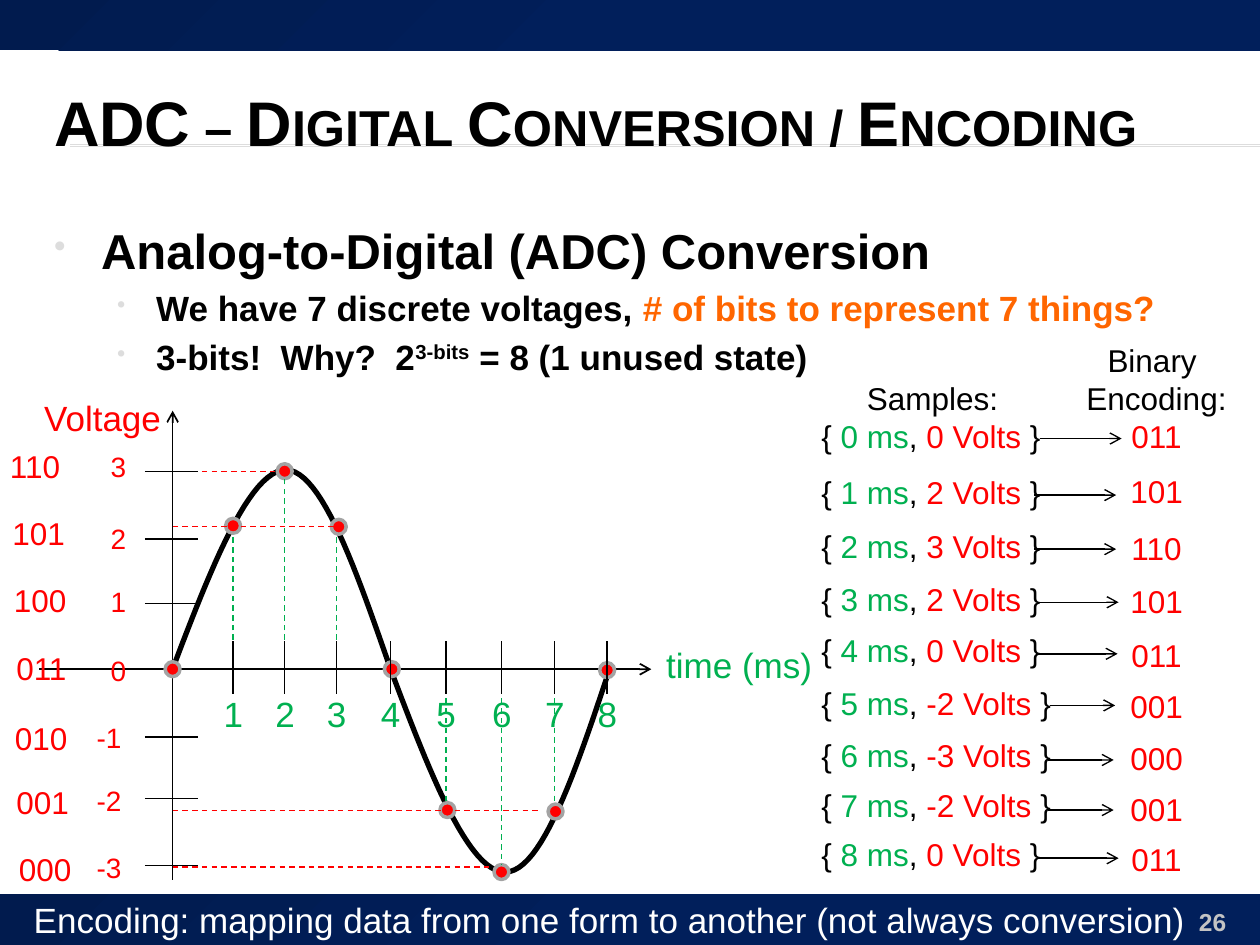
from lxml import etree
from pptx import Presentation
from pptx.dml.color import RGBColor
from pptx.enum.dml import MSO_LINE
from pptx.enum.shapes import MSO_CONNECTOR, MSO_SHAPE
from pptx.enum.text import MSO_ANCHOR, MSO_AUTO_SIZE, PP_ALIGN
from pptx.oxml.ns import qn
from pptx.util import Cm, Pt

STRAIGHT = MSO_CONNECTOR.STRAIGHT
RECT, OVAL = MSO_SHAPE.RECTANGLE, MSO_SHAPE.OVAL
DASH = MSO_LINE.DASH
MIDDLE = MSO_ANCHOR.MIDDLE
GROW = MSO_AUTO_SIZE.SHAPE_TO_FIT_TEXT
LEFT, CENTER, RIGHT = PP_ALIGN.LEFT, PP_ALIGN.CENTER, PP_ALIGN.RIGHT

FONT = "Arial"
COLORS = {
    "black": "000000", "white": "FFFFFF", "red": "FF0000", "green": "00B050",
    "orange": "FF6600", "rule": "DDDDDD", "ring": "A3A3A3", "number": "C3C3C3",
    "navy_dark": "011B4E", "navy": "011F5B",
}

# All lengths below are in centimetres.
AXIS_X, AXIS_Y = 3.48, 13.49
TIME_X = [4.7, 5.74, 6.78, 7.87, 8.99, 10.11, 11.18, 12.24]
DOTS = [(3.48, 13.49), (4.7, 10.6), (5.74, 9.5), (6.83, 10.62), (7.9, 13.49),
        (9.02, 16.33), (10.11, 17.58), (11.2, 16.36), (12.24, 13.51)]
DOT_R = 0.15
# volts: tick y, label top, code left, code top
LEVELS = {
    3: (9.5, 8.94, -0.05, 8.89), 2: (10.87, 10.39, 0, 10.24),
    1: (12.17, 11.66, 0.03, 11.58), 0: (13.49, 13.06, 0.08, 12.95),
    -1: (14.86, 14.4, 0.05, 14.38), -2: (16.1, 15.67, 0.08, 15.67),
    -3: (17.45, 17.02, 0.13, 17.02),
}
# volts, sample top, code top, arrow x, arrow y; one row per millisecond
SAMPLES = [
    (0, 7.52, 6.76, 20.96, 8.84), (2, 9.42, 9.4, 20.85, 9.98),
    (3, 10.49, 10.54, 20.85, 11.07), (2, 11.56, 11.61, 20.9, 12.14),
    (0, 12.6, 12.7, 20.88, 13.18), (-2, 13.67, 13.72, 21.16, 14.22),
    (-3, 14.71, 14.78, 21.13, 15.32), (-2, 15.72, 15.8, 21.13, 16.33),
    (0, 16.71, 16.81, 20.9, 17.3),
]
# level line y, right end
HELD_LEVELS = [(10.62, 6.78), (9.5, 5.72), (17.48, 9.93), (16.34, 10.92)]
HALF_WAVES = [
    [(3.48, 13.49), (4.24, 11.48), (5.03, 9.47), (5.77, 9.47),
     (6.5, 9.5), (7.19, 11.53), (7.9, 13.56)],
    [(7.9, 13.56), (8.66, 15.57), (9.45, 17.6), (10.19, 17.58),
     (10.92, 17.58), (11.61, 15.54), (12.29, 13.49)],
]


def rgb(name):
    return RGBColor.from_string(COLORS[name])


def encode(volts):
    """Three-bit code of a level from -3 to 3."""
    return format(volts + 3, "03b")


def add_runs(p, runs, size, bold=False):
    """Fill a paragraph from (text, colour name) pairs."""
    for text, color in runs:
        r = p.add_run()
        r.text = text
        r.font.name, r.font.size, r.font.bold = FONT, Pt(size), bold
        r.font.color.rgb = rgb(color)


def add_text(slide, box, paragraphs, size, bold=False, wrap=False):
    """Add a text box; paragraphs are (alignment, runs) pairs."""
    sp = slide.shapes.add_textbox(*map(Cm, box))
    tf = sp.text_frame
    tf.word_wrap = wrap
    tf.auto_size = MSO_AUTO_SIZE.NONE if wrap else GROW
    for i, (align, runs) in enumerate(paragraphs):
        p = tf.add_paragraph() if i else tf.paragraphs[0]
        p.alignment = align
        add_runs(p, runs, size, bold)
    return tf


def add_label(slide, box, text, color, size):
    return add_text(slide, box, [(LEFT, [(text, color)])], size)


def add_line(slide, x1, y1, x2, y2, color="black", width=0.79, dash=None, arrow=False):
    line = slide.shapes.add_connector(STRAIGHT, Cm(x1), Cm(y1), Cm(x2), Cm(y2))
    line.line.color.rgb = rgb(color)
    line.line.width = Pt(width)
    if dash:
        line.line.dash_style = dash
    if arrow:
        etree.SubElement(line.line._get_or_add_ln(), qn("a:tailEnd"), type="arrow")
    etree.SubElement(line._element.spPr, qn("a:effectLst"))


def add_band(slide, top):
    sp = slide.shapes.add_shape(RECT, 0, Cm(top), Cm(25.4), Cm(1.02))
    sp.shadow.inherit = False
    sp.line.fill.background()
    sp.fill.gradient()
    sp.fill.gradient_angle = 315
    start, end = sp.fill.gradient_stops
    start.color.rgb, start.position = rgb("navy_dark"), 0
    end.color.rgb, end.position = rgb("navy"), 0.5


def add_dot(slide, x, y):
    sp = slide.shapes.add_shape(OVAL, Cm(x - DOT_R), Cm(y - DOT_R), Cm(2 * DOT_R), Cm(2 * DOT_R))
    sp.shadow.inherit = False
    sp.fill.solid()
    sp.fill.fore_color.rgb = rgb("red")
    sp.line.color.rgb = rgb("ring")
    sp.line.width = Pt(2)


def bezier(a, b, c, d, t):
    u = 1 - t
    return tuple(Cm(u**3 * i + 3 * u * u * t * j + 3 * u * t * t * k + t**3 * m)
                 for i, j, k, m in zip(a, b, c, d))


def add_curve(slide, points, steps=24):
    """Draw chained cubic Bezier segments as one open outline."""
    outline = [bezier(*points[i:i + 4], n / steps)
               for i in range(0, len(points) - 1, 3) for n in range(steps + 1)]
    builder = slide.shapes.build_freeform(*outline[0])
    builder.add_line_segments(outline[1:], close=False)
    sp = builder.convert_to_shape()
    sp.shadow.inherit = False
    sp.fill.background()
    sp.line.color.rgb = rgb("black")
    sp.line.width = Pt(3)


def add_bullet(p, indent, hanging, space):
    p.space_before = Pt(space)
    pPr = p._p.get_or_add_pPr()
    pPr.set("marL", str(Cm(indent)))
    pPr.set("indent", str(-Cm(hanging)))
    color = etree.SubElement(pPr, qn("a:buClr"))
    etree.SubElement(color, qn("a:srgbClr"), val=COLORS["rule"])
    etree.SubElement(pPr, qn("a:buSzPct"), val="70000")
    etree.SubElement(pPr, qn("a:buChar"), char="•")


def add_heading(slide):
    title = [(LEFT, [("ADC – Digital Conversion / Encoding", "black")])]
    tf = add_text(slide, (0.84, 1.27, 24.13, 2.34), title, 36, True, True)
    tf.vertical_anchor = MIDDLE
    tf.paragraphs[0].runs[0].font._element.set("cap", "small")

    tf = add_text(slide, (0.84, 4.32, 24.5, 5), [
        (LEFT, [("Analog-to-Digital (ADC) Conversion", "black")]),
        (LEFT, [("We have 7 discrete voltages, ", "black"),
                ("# of bits to represent 7 things?", "orange")]),
        (LEFT, [("3-bits!  Why?  2", "black"), ("3-bits", "black"),
                (" = 8 (1 unused state)", "black")]),
    ], 20, True, True)
    main_point, *details = tf.paragraphs
    main_point.runs[0].font.size = Pt(28)
    add_bullet(main_point, 0.95, 0.95, 5.6)
    for p in details:
        add_bullet(p, 2.06, 0.79, 4)
    details[-1].runs[1].font._element.set("baseline", "30000")


def add_graph(slide):
    add_line(slide, 0.79, AXIS_Y, 13.13, AXIS_Y, width=1, arrow=True)
    add_line(slide, AXIS_X, 17.73, AXIS_X, 8.28, width=1, arrow=True)
    add_label(slide, (13.18, 12.85, 3.48, 1.12), "time (ms)", "green", 20)
    add_label(slide, (0.64, 7.87, 2.9, 1.12), "Voltage", "red", 20)
    for points in HALF_WAVES:
        add_curve(slide, points)
    for x, y in DOTS:
        add_dot(slide, x, y)
    for y, right in HELD_LEVELS:
        add_line(slide, AXIS_X, y, right, y, "red", dash=DASH)
    for ms, x in enumerate(TIME_X, 1):
        y = DOTS[ms][1]
        if abs(y - AXIS_Y) > DOT_R:
            edge = y + DOT_R if y < AXIS_Y else y - DOT_R
            add_line(slide, x, AXIS_Y, x, edge, "green", dash=DASH)
        add_line(slide, x, 12.93, x, 14)
        add_label(slide, (x - 0.44, 13.84, 0.91, 1.12), str(ms), "green", 20)
    for volts, (y, label_top, code_left, code_top) in LEVELS.items():
        if volts:
            add_line(slide, 2.92, y, 3.99, y)
        left, width = (1.7, 1.02) if volts < 0 else (1.98, 0.84)
        add_label(slide, (left, label_top, width, 0.94), str(volts), "red", 16)
        add_label(slide, (code_left, code_top, 1.57, 1.02), encode(volts), "red", 18)


def add_samples(slide):
    for ms, (volts, top, code_top, x, y) in enumerate(SAMPLES):
        sample = [(LEFT, [("{ ", "black"), (f"{ms} ms", "green"), (", ", "black"),
                          (f"{volts} Volts", "red"), (" }", "black")])]
        code = [(CENTER, [(encode(volts), "red")])]
        code_box = (22.53, code_top, 1.57, 1.02)
        if ms == 0:
            sample.insert(0, (CENTER, [("Samples:", "black")]))
            code = [(CENTER, [(word, "black")]) for word in ("Binary ", "Encoding:")] + code
            code_box = (21.64, code_top, 3.35, 2.57)
        width, reach = (5.18, 1.32) if volts < 0 else (4.98, 1.65)
        add_text(slide, (16.31, top, width, 1.02 * len(sample)), sample, 18)
        add_text(slide, code_box, code, 18)
        add_line(slide, x, y, x + reach, y, arrow=True)


def main():
    prs = Presentation()
    prs.slide_width, prs.slide_height = Cm(25.4), Cm(19.05)
    slide = prs.slides.add_slide(prs.slide_layouts[6])
    for y in (2.92, 2.95):
        add_line(slide, 1.42, y, 25.4, y, "rule", 0.75)
    for top in (0, 18.03):
        add_band(slide, top)
    add_heading(slide)
    add_graph(slide)
    add_samples(slide)
    add_text(slide, (22.86, 18.16, 2.11, 0.69), [(RIGHT, [("26", "number")])], 14, True, True)
    add_label(slide, (0.43, 17.98, 23.88, 1.12),
              "Encoding: mapping data from one form to another (not always conversion)", "white", 20)
    prs.save("out.pptx")


if __name__ == "__main__":
    main()
